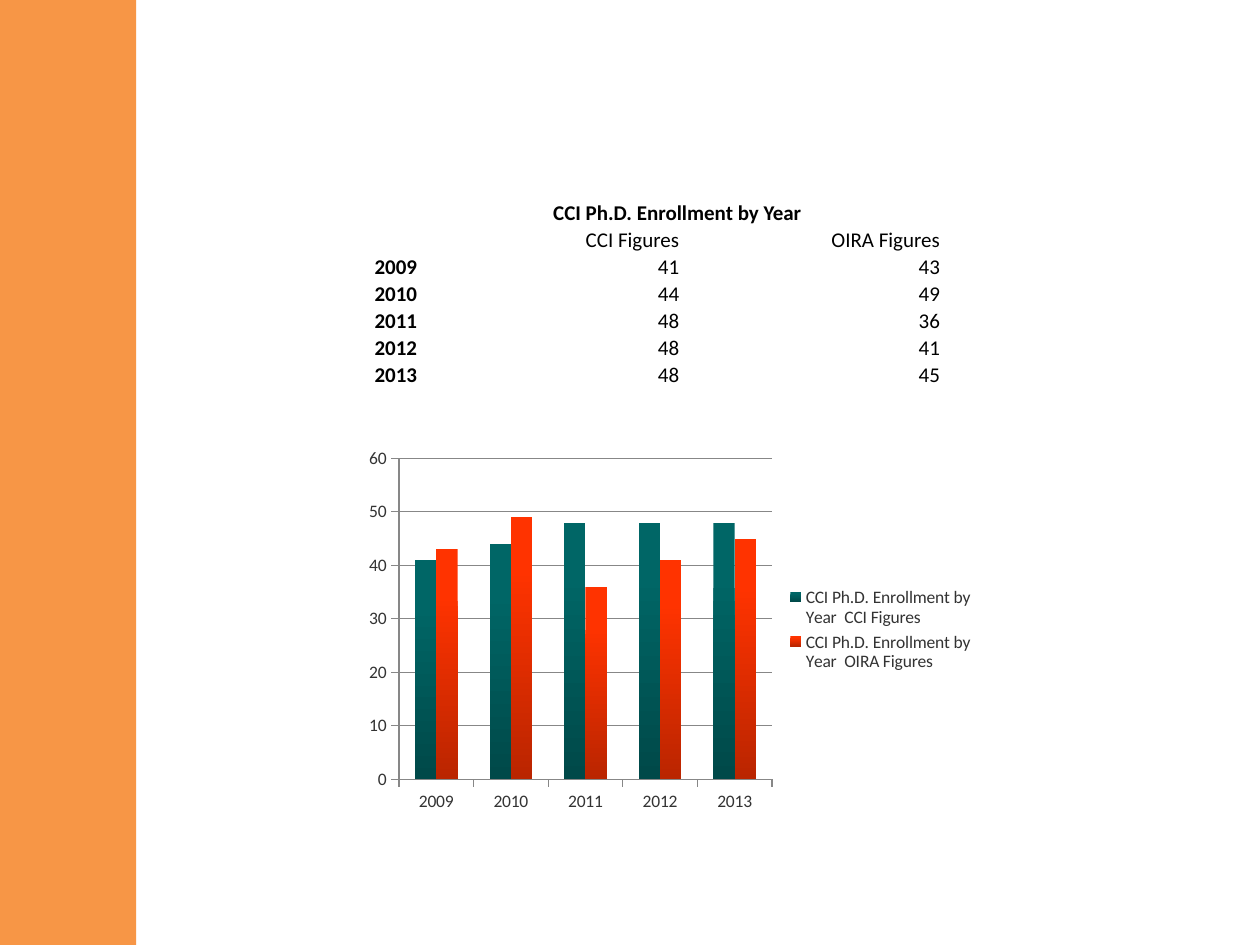
from lxml.etree import SubElement
from pptx import Presentation
from pptx.chart.data import CategoryChartData
from pptx.dml.color import RGBColor
from pptx.enum.chart import XL_CHART_TYPE, XL_LEGEND_POSITION, XL_TICK_MARK
from pptx.enum.shapes import MSO_SHAPE
from pptx.enum.text import MSO_ANCHOR, PP_ALIGN
from pptx.oxml.ns import qn
from pptx.util import Inches, Pt

FONT = "Calibri"
COLORS = {"band": "F79646", "text": "000000", "chart_text": "333333", "line": "878787"}
TITLE = "CCI Ph.D. Enrollment by Year "
YEARS = ["2009", "2010", "2011", "2012", "2013"]
ENROLLMENT = {
    "CCI Figures": [41, 44, 48, 48, 48],
    "OIRA Figures": [43, 49, 36, 41, 45],
}
BAR_GRADIENTS = [("006666", "004949"), ("FF3300", "BA2500")]
COLUMN_WIDTHS = [0.9, 2.08, 2.07]
ROW_HEIGHT = 1.5 / 7
CELL_FORMAT = {
    "margin_left": Inches(0.01), "margin_right": Inches(0.01),
    "margin_top": Inches(0.01), "margin_bottom": 0,
    "vertical_anchor": MSO_ANCHOR.BOTTOM,
}


def color(name):
    return RGBColor.from_string(COLORS[name])


def apply(target, values):
    for name, value in values.items():
        setattr(target, name, value)


def add_band(slide):
    band = slide.shapes.add_shape(MSO_SHAPE.RECTANGLE, 0, 0, Inches(1.08), Inches(7.5))
    band.shadow.inherit = False
    band.fill.solid()
    band.fill.fore_color.rgb = color("band")
    band.line.fill.background()


def fill_cell(cell, text, bold, align):
    apply(cell, CELL_FORMAT)
    cell.fill.background()
    para = cell.text_frame.paragraphs[0]
    para.alignment = align
    if text:
        span = para.add_run()
        span.text = text
        apply(span.font, {"name": FONT, "size": Pt(12), "bold": bold})
        span.font.color.rgb = color("text")
    else:
        # An empty cell would otherwise grow its row to the default text size.
        SubElement(para._p, qn("a:endParaRPr"), sz="1200")


def add_enrollment_table(slide):
    rows = [["", TITLE, ""], ["", *ENROLLMENT]]
    rows += [[year, *map(str, values)] for year, *values in zip(YEARS, *ENROLLMENT.values())]
    table = slide.shapes.add_table(
        len(rows), len(COLUMN_WIDTHS), Inches(2.42), Inches(1.58),
        Inches(sum(COLUMN_WIDTHS)), Inches(ROW_HEIGHT * len(rows))).table
    apply(table, {"first_row": False, "horz_banding": False})
    for column, width in zip(table.columns, COLUMN_WIDTHS):
        column.width = Inches(width)
    for r, texts in enumerate(rows):
        table.rows[r].height = Inches(ROW_HEIGHT)
        for c, text in enumerate(texts):
            align = PP_ALIGN.CENTER if r == 0 else PP_ALIGN.RIGHT
            fill_cell(table.cell(r, c), text, r == 0 or c == 0, align)
    table.cell(0, 1).merge(table.cell(0, 2))


def add_enrollment_chart(slide):
    data = CategoryChartData()
    data.categories = YEARS
    for name, values in ENROLLMENT.items():
        data.add_series(f"{TITLE} {name}", values)
    chart = slide.shapes.add_chart(
        XL_CHART_TYPE.COLUMN_CLUSTERED, Inches(2.83), Inches(3.5),
        Inches(5), Inches(3), data).chart
    apply(chart, {"has_title": False, "has_legend": True})
    apply(chart.font, {"name": FONT, "size": Pt(10)})
    chart.font.color.rgb = color("chart_text")
    apply(chart.legend, {"position": XL_LEGEND_POSITION.RIGHT, "include_in_layout": False})

    plot = chart.plots[0]
    apply(plot, {"gap_width": 150, "overlap": 0, "vary_by_categories": False})
    for series, gradient in zip(plot.series, BAR_GRADIENTS):
        fill = series.format.fill
        fill.gradient()
        fill.gradient_angle = 270
        for stop, shade, position in zip(fill.gradient_stops, gradient, (0.2, 1)):
            stop.color.rgb = RGBColor.from_string(shade)
            stop.position = position

    apply(chart.value_axis, {"minimum_scale": 0, "maximum_scale": 60, "major_unit": 10,
                             "has_major_gridlines": True})
    for axis in (chart.category_axis, chart.value_axis):
        axis.major_tick_mark = XL_TICK_MARK.OUTSIDE
    for part in (chart.category_axis, chart.value_axis, chart.value_axis.major_gridlines):
        part.format.line.color.rgb = color("line")
        part.format.line.width = Pt(0.75)


def main():
    deck = Presentation()
    apply(deck, {"slide_width": Inches(10), "slide_height": Inches(7.5)})
    slide = deck.slides.add_slide(deck.slide_layouts[6])
    add_band(slide)
    add_enrollment_table(slide)
    add_enrollment_chart(slide)
    deck.save("out.pptx")


if __name__ == "__main__":
    main()
